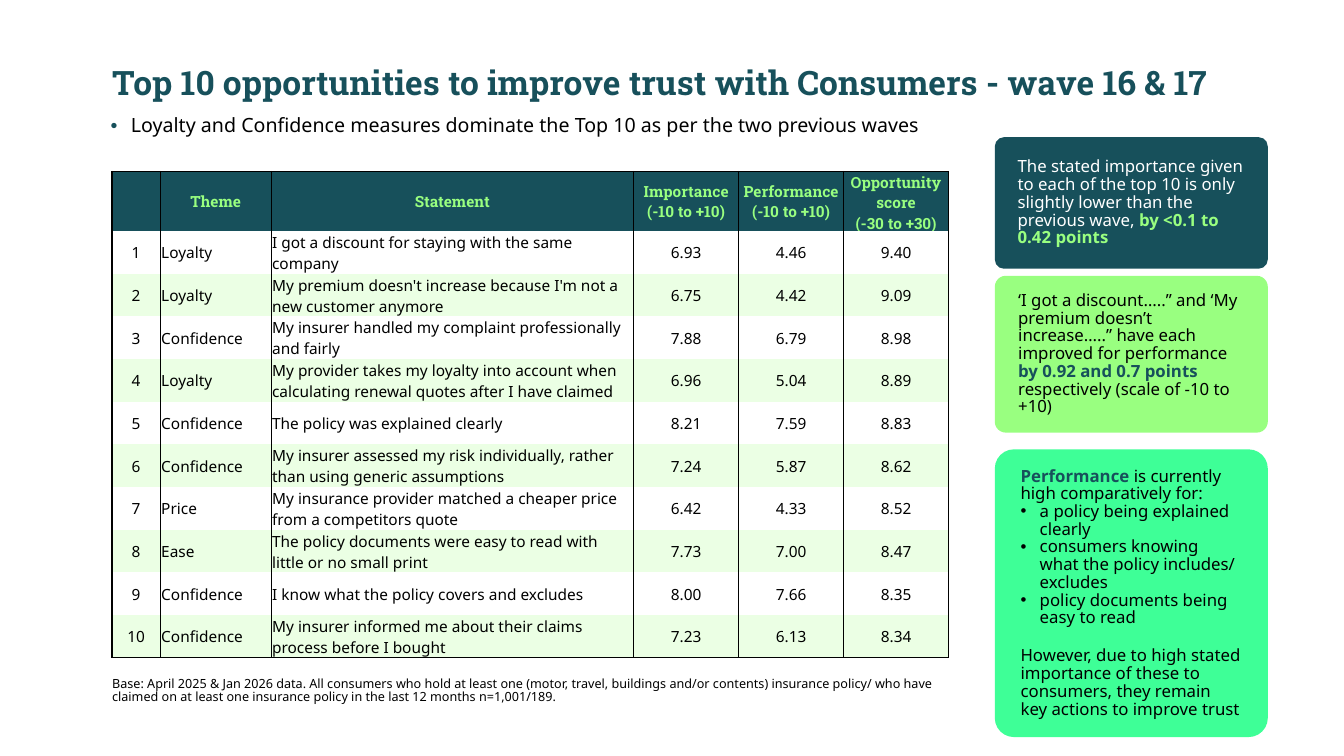
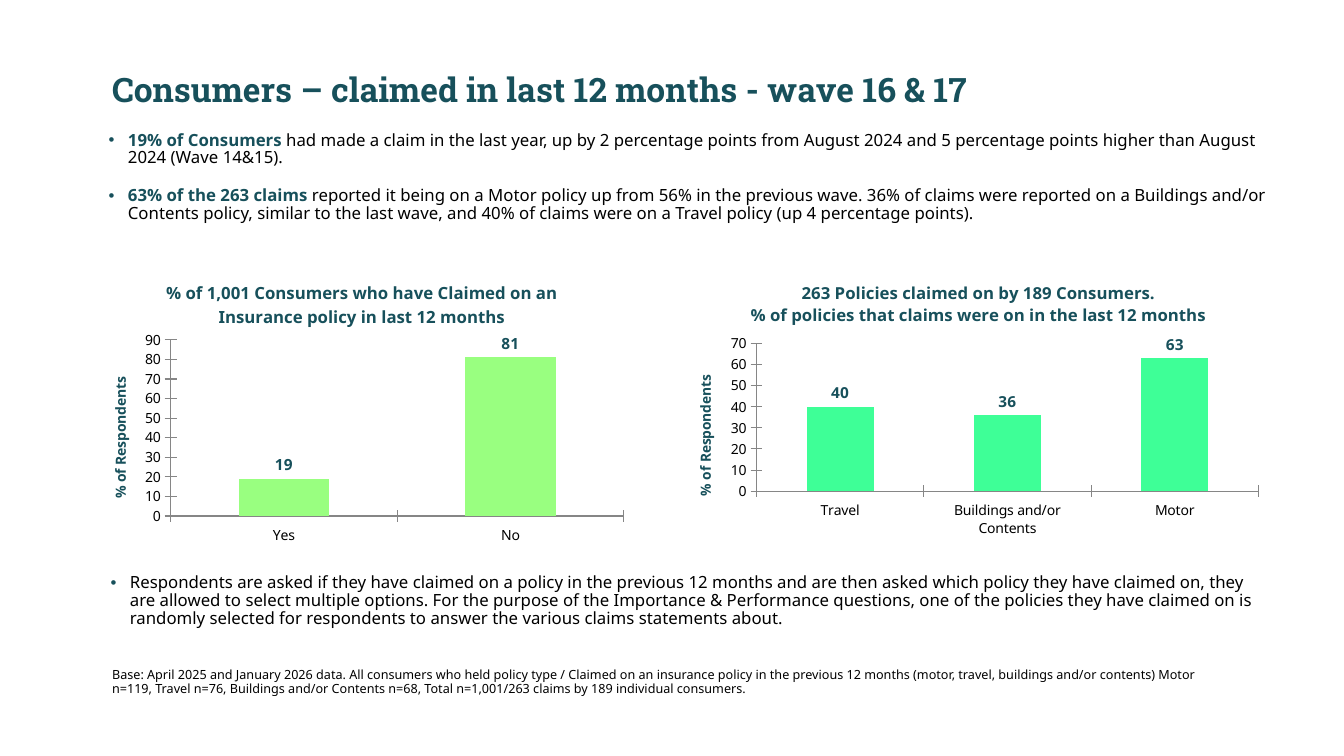
from dataclasses import dataclass
from lxml.etree import SubElement
from pptx import Presentation
from pptx.chart.data import CategoryChartData
from pptx.dml.color import RGBColor
from pptx.enum.chart import XL_CHART_TYPE, XL_LABEL_POSITION, XL_TICK_MARK
from pptx.enum.shapes import MSO_SHAPE
from pptx.enum.text import MSO_ANCHOR, PP_ALIGN
from pptx.oxml import parse_xml
from pptx.oxml.ns import nsdecls, qn
from pptx.util import Pt

HUES = {
    "teal": "17505B", "lime": "99FF80", "mint": "3EFF97", "pale": "EBFFE4",
    "white": "FFFFFF", "black": "000000", "grey": "868686",
}
HEAD, BODY = "Roboto Slab", "Noto Sans"
PLAIN_GRID = "{2D5ABB26-0587-4C30-8999-92F81FD0307C}"


@dataclass
class Para:
    """Runs are (text, hue) pairs; a run with a hue of its own is bold."""
    runs: list
    dot: str = None
    gap: float = 0


def rgb(hue):
    return RGBColor.from_string(HUES[hue])


def style(font, size, hue, face=BODY, bold=False):
    font.size, font.name, font.bold = Pt(size), face, bold
    font.color.rgb = rgb(hue)


def bullet(para, hue, indent):
    props = para._p.get_or_add_pPr()
    props.set("marL", str(Pt(indent)))
    props.set("indent", str(-Pt(indent)))
    color = SubElement(props, qn("a:buClr"))
    SubElement(color, qn("a:srgbClr"), val=HUES[hue])
    SubElement(props, qn("a:buFont"), typeface="Arial")
    SubElement(props, qn("a:buChar"), char="•")


def border(cell, sides):
    """Black one-point lines; sides must come in the order L, R, T, B."""
    props = cell._tc.get_or_add_tcPr()
    for side in sides:
        line = SubElement(props, qn("a:ln" + side), w=str(Pt(1)))
        fill = SubElement(line, qn("a:solidFill"))
        SubElement(fill, qn("a:srgbClr"), val=HUES["black"])


class Deck:
    def __init__(self):
        self.file = Presentation()
        self.file.slide_width, self.file.slide_height = Pt(960), Pt(540)
        self.slide = None

    def page(self, title, top):
        self.slide = self.file.slides.add_slide(self.file.slide_layouts[6])
        self.text(73, top, 884, 36, [Para([(title, None)])], 24, "teal", HEAD, True, 0.95)

    def set_text(self, frame, paras, size, hue, face=BODY, bold=False, space=0.88, indent=13.7):
        frame.word_wrap = True
        for i, item in enumerate(paras):
            para = frame.paragraphs[0] if i == 0 else frame.add_paragraph()
            if item.dot:
                bullet(para, item.dot, indent)
            para.alignment = PP_ALIGN.LEFT
            para.line_spacing = space
            para.space_before = Pt(item.gap)
            style(para.font, size, hue, face, bold)
            for words, tint in item.runs:
                run = para.add_run()
                run.text = words
                if tint:
                    run.font.bold = True
                    run.font.color.rgb = rgb(tint)

    def text(self, left, top, width, height, paras, size, hue="black", *look, **more):
        box = self.slide.shapes.add_textbox(Pt(left), Pt(top), Pt(width), Pt(height))
        self.set_text(box.text_frame, paras, size, hue, *look, **more)

    def base(self, top, width, words):
        self.text(73, top, width, 32, [Para([(words, None)])], 9)

    def card(self, top, height, fill, hue, paras):
        card = self.slide.shapes.add_shape(
            MSO_SHAPE.ROUNDED_RECTANGLE, Pt(710.6), Pt(top), Pt(195), Pt(height))
        card.shadow.inherit = False
        card.adjustments[0] = 0.07
        card.fill.solid()
        card.fill.fore_color.rgb = rgb(fill)
        card.line.fill.background()
        frame = card.text_frame
        frame.vertical_anchor = MSO_ANCHOR.MIDDLE
        frame.margin_left = frame.margin_right = Pt(14.4)
        frame.margin_top = frame.margin_bottom = Pt(14.4)
        self.set_text(frame, paras, 12, hue)

    def cell(self, cell, words, fill, sides, center, look):
        border(cell, sides)
        cell.fill.solid()
        cell.fill.fore_color.rgb = rgb(fill)
        cell.vertical_anchor = MSO_ANCHOR.MIDDLE
        cell.margin_left = cell.margin_right = cell.margin_top = Pt(0.7)
        cell.margin_bottom = 0
        cell.text_frame.text = words
        for para in cell.text_frame.paragraphs:
            para.alignment = PP_ALIGN.CENTER if center else PP_ALIGN.LEFT
            style(para.font, 11, *look)

    def table(self, left, top, widths, heads, rows):
        high = [42.7] + [30.5] * len(rows)
        frame = self.slide.shapes.add_table(
            len(high), len(widths), Pt(left), Pt(top), Pt(sum(widths)), Pt(sum(high)))
        table = frame.table
        table._tbl.tblPr.find(qn("a:tableStyleId")).text = PLAIN_GRID
        table.first_row = table.horz_banding = False
        for col, width in zip(table.columns, widths):
            col.width = Pt(width)
        for r, line in enumerate([heads] + rows):
            table.rows[r].height = Pt(high[r])
            sides = "LRT" if r == 0 else "LRB" if r == len(rows) else "LR"
            fill = "teal" if r == 0 else "white" if r % 2 else "pale"
            look = ("lime", HEAD, True) if r == 0 else ("black",)
            for c, words in enumerate(line):
                center = r == 0 or c not in (1, 2)
                self.cell(table.cell(r, c), words, fill, sides, center, look)

    def chart(self, box, title, cats, vals, hue, top, plot):
        """Column chart; plot is the inner area as shares of the box."""
        data = CategoryChartData(number_format="0")
        data.categories = cats
        data.add_series("Series 1", vals)
        chart = self.slide.shapes.add_chart(
            XL_CHART_TYPE.COLUMN_CLUSTERED, *map(Pt, box), data).chart
        chart.has_legend = False
        style(chart.font, 10, "black")
        self.label(chart.chart_title, title, 12)
        value, group = chart.value_axis, chart.category_axis
        value.has_major_gridlines = False
        value.minimum_scale, value.maximum_scale, value.major_unit = 0, top, 10
        self.label(value.axis_title, "% of Respondents", 10)
        for axis in (value, group):
            axis.major_tick_mark = XL_TICK_MARK.CROSS
            axis.minor_tick_mark = XL_TICK_MARK.NONE
            axis.format.line.color.rgb = rgb("grey")
        bars = chart.plots[0]
        bars.gap_width, bars.vary_by_categories = 150, False
        fill = bars.series[0].format.fill
        fill.solid()
        fill.fore_color.rgb = rgb(hue)
        bars.has_data_labels = True
        tags = bars.data_labels
        tags.show_value, tags.position = True, XL_LABEL_POSITION.OUTSIDE_END
        tags.number_format, tags.number_format_is_linked = "0", False
        style(tags.font, 11, "teal", bold=True)
        self.place(chart, plot)

    def label(self, title, words, size):
        title.text_frame.text = words
        for para in title.text_frame.paragraphs:
            style(para.font, size, "teal", bold=True)

    def place(self, chart, plot):
        area = chart._chartSpace.chart.plotArea
        for old in area.findall(qn("c:layout")):
            area.remove(old)
        parts = '<c:layoutTarget val="inner"/><c:xMode val="edge"/><c:yMode val="edge"/>'
        parts += "".join(f'<c:{key} val="{share}"/>' for key, share in zip("xywh", plot))
        area.insert(0, parse_xml(
            f'<c:layout {nsdecls("c")}><c:manualLayout>{parts}</c:manualLayout></c:layout>'))


HEADS = ["", "Theme", "Statement", "Importance\n(-10 to +10)",
         "Performance\n(-10 to +10)", "Opportunity score\n(-30 to +30)"]
ROWS = [
    ("Loyalty", "I got a discount for staying with the same company", "6.93", "4.46", "9.40"),
    ("Loyalty", "My premium doesn't increase because I'm not a new customer anymore",
     "6.75", "4.42", "9.09"),
    ("Confidence", "My insurer handled my complaint professionally and fairly",
     "7.88", "6.79", "8.98"),
    ("Loyalty", "My provider takes my loyalty into account when calculating renewal quotes "
     "after I have claimed", "6.96", "5.04", "8.89"),
    ("Confidence", "The policy was explained clearly", "8.21", "7.59", "8.83"),
    ("Confidence", "My insurer assessed my risk individually, rather than using generic "
     "assumptions", "7.24", "5.87", "8.62"),
    ("Price", "My insurance provider matched a cheaper price from a competitors quote",
     "6.42", "4.33", "8.52"),
    ("Ease", "The policy documents were easy to read with little or no small print",
     "7.73", "7.00", "8.47"),
    ("Confidence", "I know what the policy covers and excludes", "8.00", "7.66", "8.35"),
    ("Confidence", "My insurer informed me about their claims process before I bought",
     "7.23", "6.13", "8.34"),
]


def chances(deck):
    deck.page("Top 10 opportunities to improve trust with Consumers - wave 16 & 17", 43)
    rows = [(str(rank), *row) for rank, row in enumerate(ROWS, 1)]
    deck.table(80, 122.4, [34.5, 79.2, 259, 75, 75, 75], HEADS, rows)
    deck.base(480.5, 615.5, "Base: April 2025 & Jan 2026 data. All consumers who hold at least one "
              "(motor, travel, buildings and/or contents) insurance policy/ who have claimed on "
              "at least one insurance policy in the last 12 months n=1,001/189.")
    deck.text(72, 79.5, 605, 24, [Para([(
        "Loyalty and Confidence measures dominate the Top 10 as per the two previous waves",
        None)], "teal")], 14, indent=14.4)
    deck.card(98, 94, "teal", "white", [Para([
        ("The stated importance given to each of the top 10 is only slightly lower than the "
         "previous wave, ", None),
        ("by <0.1 to 0.42 points", "lime")])])
    deck.card(197, 112, "lime", "black", [Para([
        ("‘I got a discount…..” and ‘My premium doesn’t increase…..” have each improved for "
         "performance ", None),
        ("by 0.92 and 0.7 points ", "teal"),
        ("respectively (scale of -10 to +10)", None)])])
    points = ["a policy being explained clearly",
              "consumers knowing what the policy includes/ excludes",
              "policy documents being easy to read"]
    deck.card(321, 205.5, "mint", "black", [
        Para([("Performance", "teal"), (" is currently high comparatively for:", None)]),
        *(Para([(point, None)], "black") for point in points),
        Para([("However, due to high stated importance of these to consumers, they remain key "
               "actions to improve trust", None)], gap=14.4)])


def claims(deck):
    deck.page("Consumers – claimed in last 12 months - wave 16 & 17", 47.5)
    deck.base(474.5, 803.5, "Base: April 2025 and January 2026 data. All consumers who held policy "
              "type / Claimed on an insurance policy in the previous 12 months (motor, travel, "
              "buildings and/or contents) Motor n=119, Travel n=76, Buildings and/or Contents "
              "n=68, Total n=1,001/263 claims by 189 individual consumers.")
    deck.text(70.6, 90.7, 844, 80, [
        Para([("19% of Consumers ", "teal"),
              ("had made a claim in the last year, up by 2 percentage points from August 2024 "
               "and 5 percentage points higher than August 2024 (Wave 14&15).", None)], "teal"),
        Para([("63% of the 263 claims ", "teal"),
              ("reported it being on a Motor policy up from 56% in the previous wave. 36% of "
               "claims were reported on a Buildings and/or Contents policy, similar to the last "
               "wave, and 40% of claims were on a Travel policy (up 4 percentage points).",
               None)], "teal", 14.4)], 12)
    deck.text(72, 407, 835, 51, [Para([(
        "Respondents are asked if they have claimed on a policy in the previous 12 months and "
        "are then asked which policy they have claimed on, they are allowed to select multiple "
        "options. For the purpose of the Importance & Performance questions, one of the policies "
        "they have claimed on is randomly selected for respondents to answer the various claims "
        "statements about.", None)], "teal")], 12)
    deck.chart((63.4, 190, 390, 203),
               "% of 1,001 Consumers who have Claimed on an Insurance policy in last 12 months",
               ["Yes", "No"], [19, 81], "lime", 90, (0.15, 0.26, 0.83, 0.62))
    deck.chart((490.3, 190, 417, 194.4),
               "263 Policies claimed on by 189 Consumers.\n"
               "% of policies that claims were on in the last 12 months",
               ["Travel", "Buildings and/or Contents", "Motor"], [40, 36, 63], "mint", 70,
               (0.12, 0.29, 0.86, 0.55))


def main():
    deck = Deck()
    chances(deck)
    claims(deck)
    deck.file.save("out.pptx")


if __name__ == "__main__":
    main()
